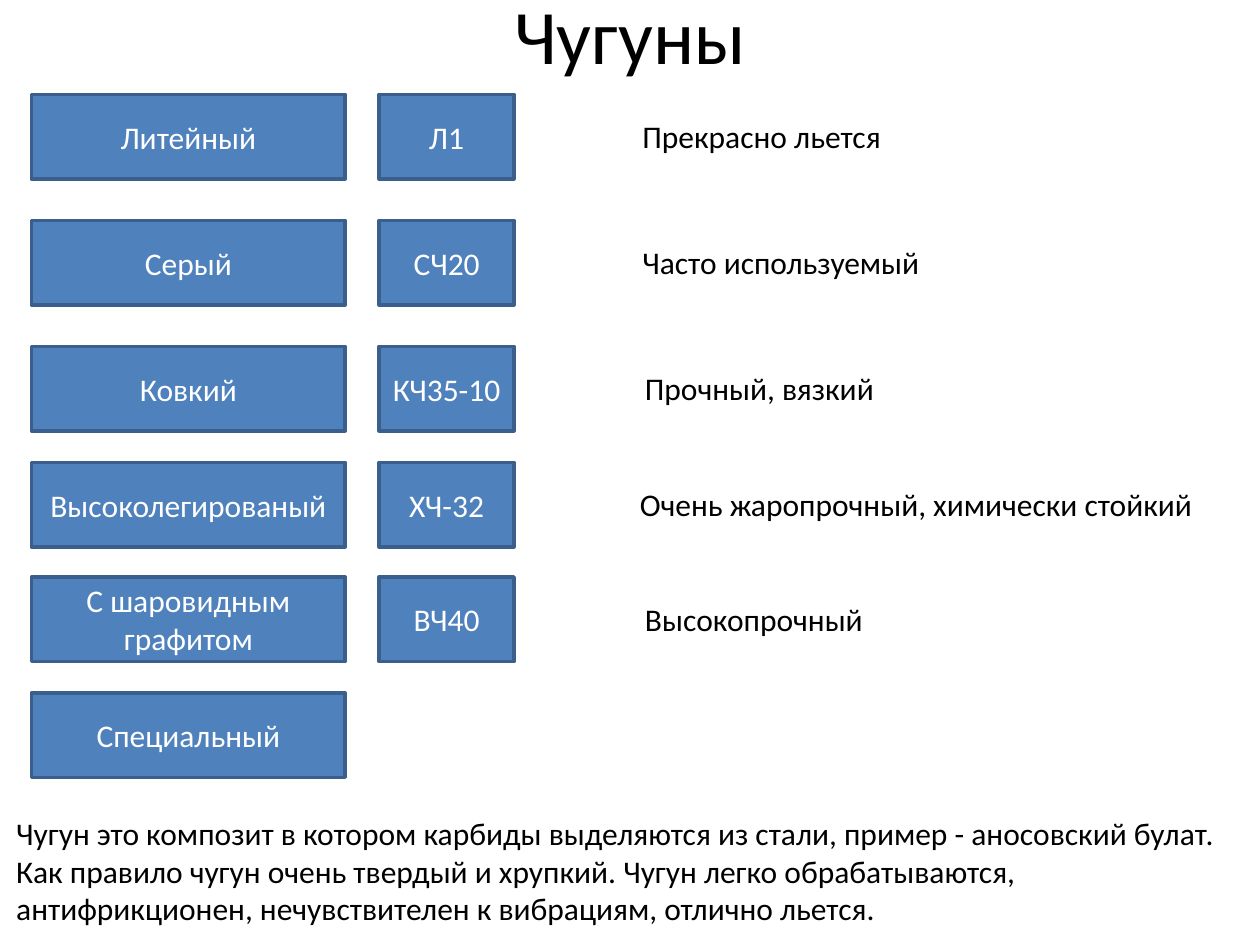
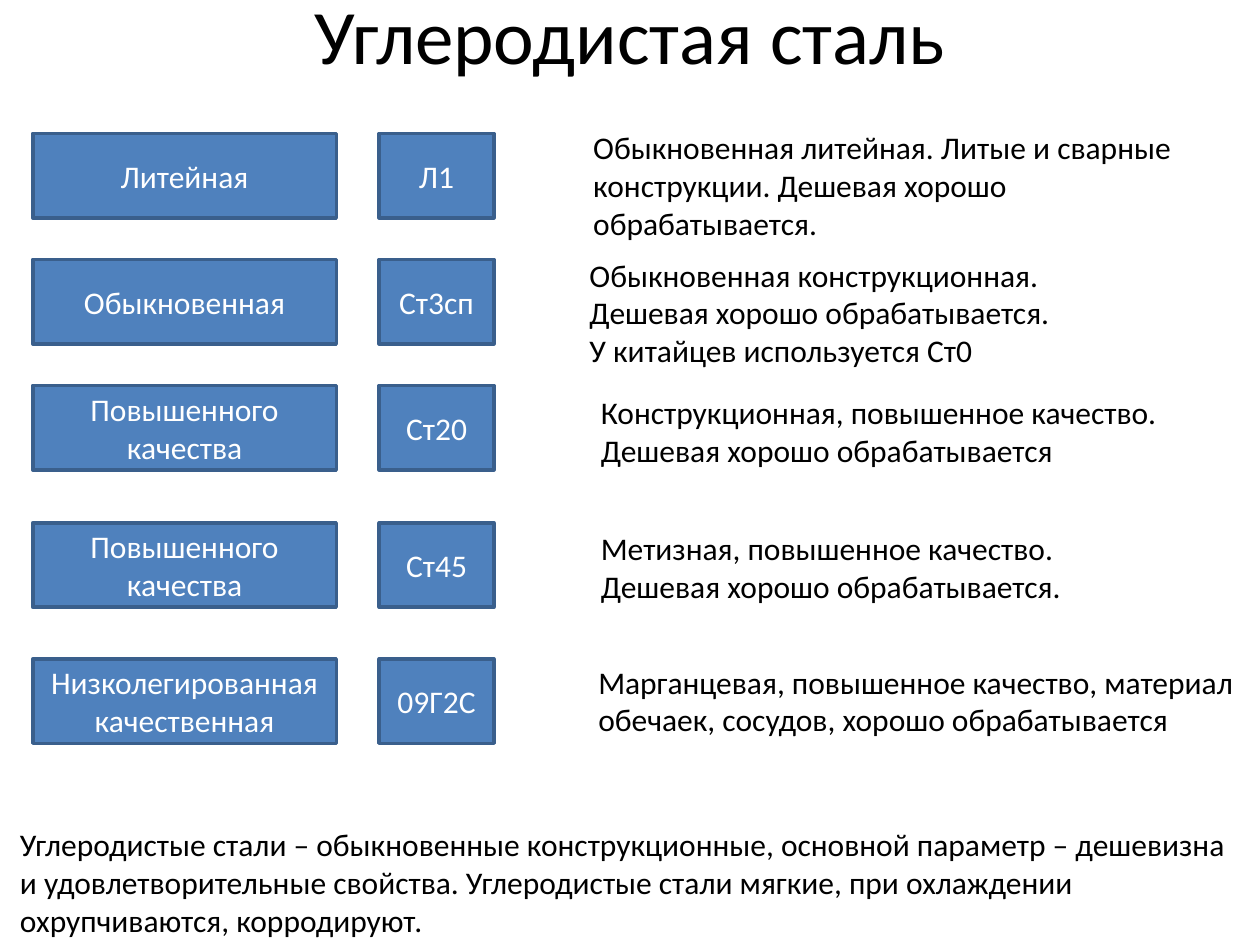
"""Build two slides that list grades of cast iron and carbon steel."""
from pptx import Presentation
from pptx.dml.color import RGBColor
from pptx.enum.shapes import MSO_SHAPE
from pptx.enum.text import MSO_ANCHOR, MSO_AUTO_SIZE, PP_ALIGN
from pptx.util import Pt

PX = 9144
RECTANGLE = MSO_SHAPE.RECTANGLE
MIDDLE = MSO_ANCHOR.MIDDLE
CENTER, LEFT = PP_ALIGN.CENTER, PP_ALIGN.LEFT
GROW = MSO_AUTO_SIZE.SHAPE_TO_FIT_TEXT

BLUE = RGBColor(0x4F, 0x81, 0xBD)
DARK_BLUE = RGBColor(0x3A, 0x5F, 0x8C)
BLACK = RGBColor(0, 0, 0)
WHITE = RGBColor(0xFF, 0xFF, 0xFF)
FONT = "Calibri"
TITLE_SIZE, BODY_SIZE = 44, 18

TITLE_BOX = (50, -17, 900, 87)
SUMMARY_WIDTH, SUMMARY_HEIGHT = 979, 101
MARK_LEFT, ROW_HEIGHT = 301, 67
TITLE_ONLY_LAYOUT = 5

# Each row: top, grade, mark, (property text, left, offset from row top, width, height)
SLIDES = [
    {
        "title": "Чугуны",
        "summary": "Чугун это композит в котором карбиды выделяются из стали, пример - аносовский булат.\n"
                   "Как правило чугун очень твердый и хрупкий. Чугун легко обрабатываются, "
                   "антифрикционен, нечувствителен к вибрациям, отлично льется.",
        "summary_at": (3, 641),
        "grade_left": 25, "grade_width": 249, "mark_width": 107,
        "wrap": False,
        "rows": [
            (75, "Литейный", "Л1", ("Прекрасно льется", 500, 13, 212, 40)),
            (175, "Серый", "СЧ20", ("Часто используемый", 500, 13, 242, 40)),
            (275, "Ковкий", "КЧ35-10", ("Прочный, вязкий", 502, 13, 204, 40)),
            (367, "Высоколегированый", "ХЧ-32",
             ("Очень жаропрочный, химически стойкий", 498, 13, 464, 40)),
            (458, "С шаровидным графитом", "ВЧ40", ("Высокопрочный", 502, 13, 195, 40)),
            (550, "Специальный", None, None),
        ],
    },
    {
        "title": "Углеродистая сталь",
        "summary": "Углеродистые стали – обыкновенные конструкционные, основной параметр – дешевизна "
                   "и удовлетворительные свойства. Углеродистые стали мягкие, при охлаждении "
                   "охрупчиваются, корродируют.",
        "summary_at": (6, 650),
        "grade_left": 26, "grade_width": 241, "mark_width": 91,
        "wrap": True,
        "rows": [
            (106, "Литейная", "Л1",
             ("Обыкновенная литейная. Литые и сварные конструкции. Дешевая хорошо обрабатывается.",
              461, -9, 525, 101)),
            (206, "Обыкновенная", "Ст3сп",
             ("Обыкновенная конструкционная.\nДешевая хорошо обрабатывается.\n"
              "У китайцев используется Ст0", 458, -8, 528, 101)),
            (306, "Повышенного качества", "Ст20",
             ("Конструкционная, повышенное качество.\nДешевая хорошо обрабатывается",
              467, 1, 505, 71)),
            (415, "Повышенного качества", "Ст45",
             ("Метизная, повышенное качество.\nДешевая хорошо обрабатывается.",
              467, 0, 505, 71)),
            (523, "Низколегированная качественная", "09Г2С",
             ("Марганцевая, повышенное качество, материал обечаек, сосудов, хорошо обрабатывается",
              465, -2, 533, 71)),
        ],
    },
]


def scaled(*lengths):
    return [length * PX for length in lengths]


def write(frame, text, size, color, align):
    frame.text = text
    for paragraph in frame.paragraphs:
        paragraph.alignment = align
        for run in paragraph.runs:
            run.font.name = FONT
            run.font.size = Pt(size)
            run.font.color.rgb = color


def add_title(slide, text):
    title = slide.shapes.title
    title.left, title.top, title.width, title.height = scaled(*TITLE_BOX)
    title.text_frame.vertical_anchor = MIDDLE
    write(title.text_frame, text, TITLE_SIZE, BLACK, CENTER)


def add_block(slide, text, left, top, width):
    block = slide.shapes.add_shape(RECTANGLE, *scaled(left, top, width, ROW_HEIGHT))
    block.shadow.inherit = False
    block.fill.solid()
    block.fill.fore_color.rgb = BLUE
    block.line.color.rgb = DARK_BLUE
    block.line.width = Pt(2)
    block.text_frame.vertical_anchor = MIDDLE
    write(block.text_frame, text, BODY_SIZE, WHITE, CENTER)


def add_note(slide, text, left, top, width, height, wrap=True):
    frame = slide.shapes.add_textbox(*scaled(left, top, width, height)).text_frame
    frame.word_wrap = wrap
    frame.auto_size = GROW
    write(frame, text, BODY_SIZE, BLACK, LEFT)


def add_metal_slide(deck, metal):
    slide = deck.slides.add_slide(deck.slide_layouts[TITLE_ONLY_LAYOUT])
    add_title(slide, metal["title"])
    add_note(slide, metal["summary"], *metal["summary_at"], SUMMARY_WIDTH, SUMMARY_HEIGHT)
    for top, grade, mark, properties in metal["rows"]:
        add_block(slide, grade, metal["grade_left"], top, metal["grade_width"])
        if mark:
            add_block(slide, mark, MARK_LEFT, top, metal["mark_width"])
        if properties:
            text, left, offset, width, height = properties
            add_note(slide, text, left, top + offset, width, height, metal["wrap"])


def main():
    deck = Presentation()
    deck.slide_width, deck.slide_height = scaled(1000, 750)
    for metal in SLIDES:
        add_metal_slide(deck, metal)
    deck.save("out.pptx")


if __name__ == "__main__":
    main()
